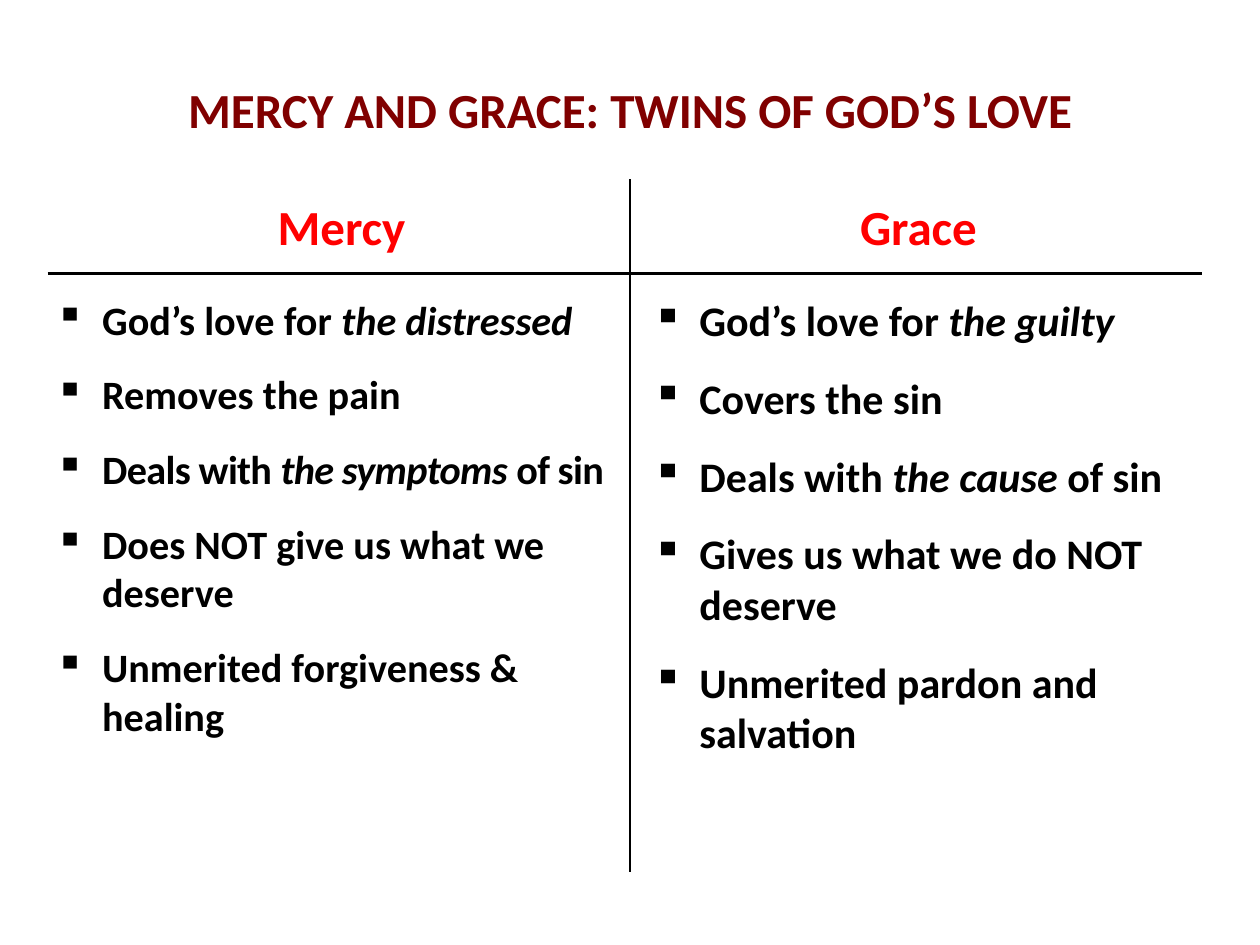
import lxml.etree
import pptx
import pptx.dml.color
import pptx.enum.shapes
import pptx.enum.text
import pptx.oxml.ns
import pptx.util

Cm = pptx.util.Cm
Pt = pptx.util.Pt
MAROON = pptx.dml.color.RGBColor(0x80, 0x00, 0x00)
RED = pptx.dml.color.RGBColor(0xFF, 0x00, 0x00)
BLACK = pptx.dml.color.RGBColor(0x00, 0x00, 0x00)

MERCY_POINTS = [
    [("God’s love for ", False), ("the distressed", True)],
    [("Removes the pain", False)],
    [("Deals with ", False), ("the symptoms ", True), ("of sin", False)],
    [("Does NOT give us what we deserve", False)],
    [("Unmerited forgiveness & healing", False)],
]
GRACE_POINTS = [
    [("God’s love for ", False), ("the guilty", True)],
    [("Covers the sin", False)],
    [("Deals with ", False), ("the cause ", True), ("of sin", False)],
    [("Gives us what we do NOT deserve", False)],
    [("Unmerited pardon and salvation", False)],
]
TIGHT_POINT = MERCY_POINTS[2]


def format_font(paragraph, size, color):
    paragraph.font.name = "Calibri"
    paragraph.font.size = Pt(size)
    paragraph.font.bold = True
    paragraph.font.color.rgb = color


def fill_heading(shape, text, color, anchor):
    frame = shape.text_frame
    frame.word_wrap = True
    frame.auto_size = pptx.enum.text.MSO_AUTO_SIZE.NONE
    frame.vertical_anchor = anchor
    frame.text = text
    paragraph = frame.paragraphs[0]
    paragraph.alignment = pptx.enum.text.PP_ALIGN.CENTER
    format_font(paragraph, 28, color)


def place_title(slide, left, top, width, height):
    title = slide.shapes.title
    title.left, title.top, title.width, title.height = left, top, width, height
    fill_heading(title, "MERCY AND GRACE: TWINS OF GOD’S LOVE", MAROON,
                 pptx.enum.text.MSO_ANCHOR.MIDDLE)


def add_heading(slide, text, left, top, width, height):
    shape = slide.shapes.add_textbox(left, top, width, height)
    fill_heading(shape, text, RED, pptx.enum.text.MSO_ANCHOR.BOTTOM)


def add_bullet(paragraph):
    properties = paragraph._p.get_or_add_pPr()
    properties.set("marL", str(Cm(0.95)))
    properties.set("indent", str(-Cm(0.95)))
    bullet = lxml.etree.SubElement(properties, pptx.oxml.ns.qn("a:buChar"))
    bullet.set("char", "▪")


def add_points(slide, points, size, gap, left, top, width, height):
    frame = slide.shapes.add_textbox(left, top, width, height).text_frame
    frame.word_wrap = True
    for index, point in enumerate(points):
        paragraph = frame.add_paragraph() if index else frame.paragraphs[0]
        add_bullet(paragraph)
        format_font(paragraph, size, BLACK)
        if index:
            paragraph.space_before = Pt(gap)
        for text, italic in point:
            run = paragraph.add_run()
            run.text = text
            if italic:
                run.font.italic = True
            if point is TIGHT_POINT:
                run._r.get_or_add_rPr().set("spc", "-40")


def add_rule(slide, start_x, start_y, end_x, end_y):
    line = slide.shapes.add_connector(
        pptx.enum.shapes.MSO_CONNECTOR.STRAIGHT, start_x, start_y, end_x, end_y)
    line.line.color.rgb = BLACK
    line.line.width = Pt(1.5)
    lxml.etree.SubElement(line._element.spPr, pptx.oxml.ns.qn("a:effectLst"))


def add_cross(slide, left, top, width, height):
    middle_x, middle_y = left + Cm(11.74), top + Cm(1.9)
    add_rule(slide, left, middle_y, left + width, middle_y)
    add_rule(slide, middle_x, top, middle_x, top + height)


def main():
    presentation = pptx.Presentation()
    presentation.slide_width = Cm(25.4)
    presentation.slide_height = Cm(19.05)
    slide = presentation.slides.add_slide(presentation.slide_layouts[5])

    place_title(slide, Cm(1.27), Cm(1.47), Cm(22.86), Cm(1.47))
    add_heading(slide, "Mercy", Cm(1.27), Cm(3.81), Cm(11.23), Cm(1.47))
    add_heading(slide, "Grace", Cm(12.9), Cm(3.81), Cm(11.23), Cm(1.47))
    add_points(slide, GRACE_POINTS, 24, 15.6, Cm(12.9), Cm(5.82), Cm(11.43), Cm(12.8))
    add_points(slide, MERCY_POINTS, 23, 15.2, Cm(0.86), Cm(5.82), Cm(11.84), Cm(12.8))
    add_cross(slide, Cm(0.96), Cm(3.61), Cm(23.27), Cm(13.97))

    presentation.save("out.pptx")


if __name__ == "__main__":
    main()
